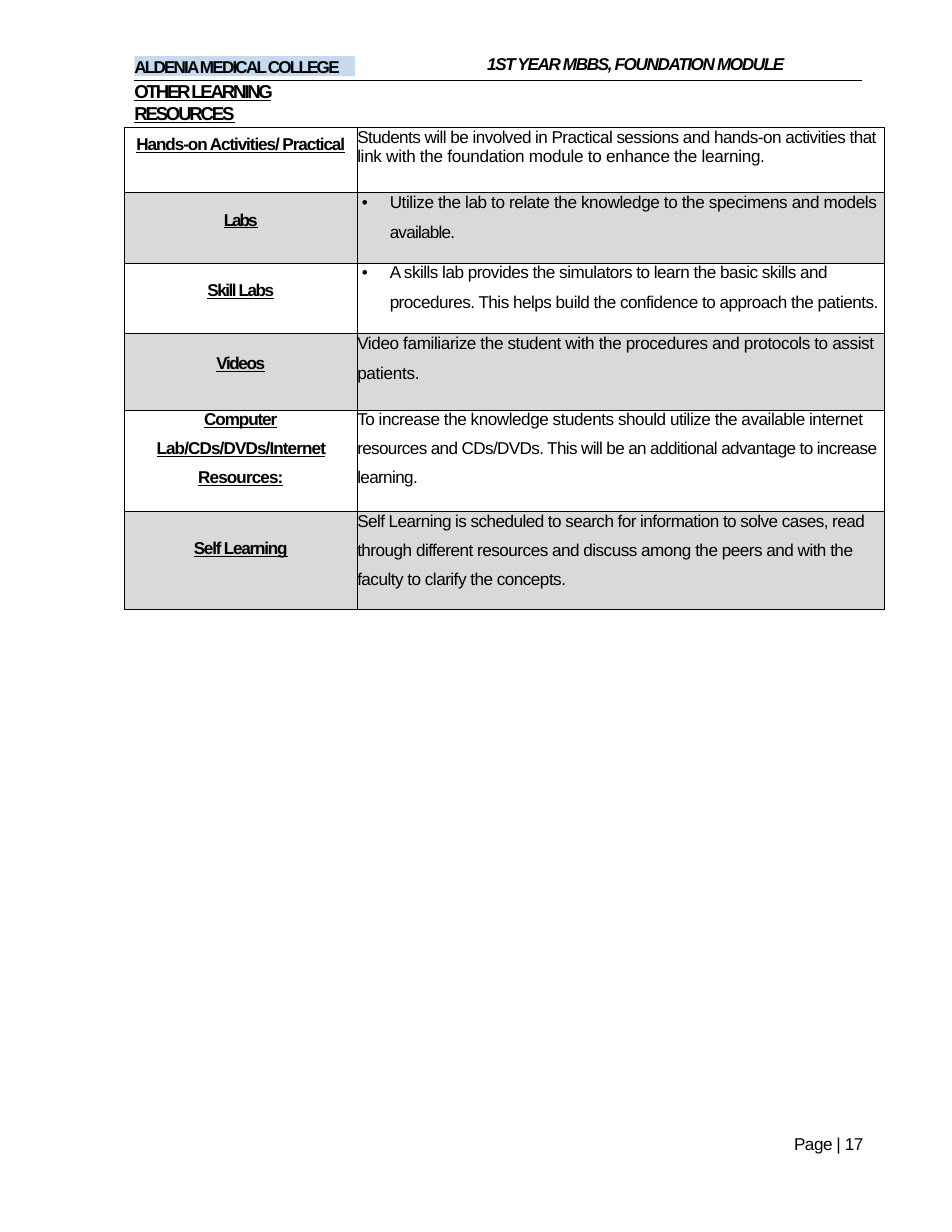
from pptx import Presentation
from pptx.util import Inches, Pt
from pptx.dml.color import RGBColor
from pptx.enum.shapes import MSO_CONNECTOR as Link, MSO_SHAPE as Shape
from pptx.enum.text import MSO_ANCHOR as Anchor, PP_ALIGN as Align
from pptx.oxml.ns import qn
from lxml import etree


def paint(target, color):
    if hasattr(target, "solid"):
        target.solid()
        target = target.fore_color
    target.rgb = RGBColor.from_string(color)


def write(para, text, gap, size=11, **style):
    """Fill a paragraph; gap is the letter spacing in points."""
    run = para.add_run()
    run.text = text
    run._r.get_or_add_rPr().set("spc", str(round(gap * 100)))
    font = para.font
    font.name, font.size = "Arial", Pt(size)
    font.bold = style.get("bold", False)
    font.italic = style.get("italic", False)
    font.underline = style.get("under", False)
    paint(font.color, "000000")


deck = Presentation()
deck.slide_width, deck.slide_height = Inches(8.5), Inches(11)
slide = deck.slides.add_slide(deck.slide_layouts[5])
shapes = slide.shapes

# Header rule
rule = shapes.add_connector(Link.STRAIGHT, Inches(1.2), Inches(0.72),
                            Inches(7.7), Inches(0.72))
paint(rule.line.fill, "000000")
rule.line.width = Pt(0.75)
etree.SubElement(rule._element.spPr, qn("a:effectLst"))

# Title, header and footer texts
title = shapes.title
college = shapes.add_shape(Shape.RECTANGLE, 0, 0, 0, 0)
college.shadow.inherit = False
paint(college.fill, "C5D9EF")
college.line.fill.background()
course = shapes.add_textbox(0, 0, 0, 0)
page = shapes.add_textbox(0, 0, 0, 0)

texts = [
    (title, (1.18, 0.7, 2.13, 0.23), 0.01, "OTHER LEARNING RESOURCES", -1.45,
     dict(size=12, bold=True, under=True)),
    (college, (1.2, 0.5, 1.97, 0.18), 0, "ALDENIA MEDICAL COLLEGE", -1.2,
     dict(bold=True)),
    (course, (4.35, 0.47, 3.38, 0.2), 0.01,
     "1ST YEAR MBBS, FOUNDATION MODULE", -0.9, dict(bold=True, italic=True)),
    (page, (7.09, 10.14, 0.64, 0.18), 0, "Page | 17", -0.3, {}),
]
for box, place, top, text, gap, style in texts:
    box.left, box.top, box.width, box.height = map(Inches, place)
    frame = box.text_frame
    frame.word_wrap = True
    frame.vertical_anchor = Anchor.TOP
    frame.margin_left = frame.margin_right = frame.margin_bottom = 0
    frame.margin_top = Inches(top)
    para = frame.paragraphs[0]
    para.alignment = Align.LEFT
    write(para, text, gap, **style)
title.text_frame.margin_left = Inches(0.02)
title.text_frame.margin_right = Inches(0.3)
page.text_frame.paragraphs[0].line_spacing = Pt(11.5)

# Rows: height, label top margin, label lines, body kind, body lines
rows = [
    (0.58, 0.07, [("Hands-on Activities/ Practical", -0.7)], "tight",
     [("Students will be involved in Practical sessions and hands-on "
       "activities that", -0.36),
      ("link with the foundation module to enhance the learning.", -0.2)]),
    (0.63, 0.16, [("Labs", -1.3)], "bullet",
     [("Utilize the lab to relate the knowledge to the specimens and models",
       -0.25),
      ("available.", -0.5)]),
    (0.63, 0.16, [("Skill Labs", -0.95)], "bullet",
     [("A skills lab provides the simulators to learn the basic skills and",
       -0.34),
      ("procedures. This helps build the confidence to approach the patients.",
       -0.34)]),
    (0.68, 0.18, [("Videos", -0.9)], "spaced",
     [("Video familiarize the student with the procedures and protocols "
       "to assist", -0.25),
      ("patients.", -0.2)]),
    (0.91, 0, [("Computer", -0.75),
               ("Lab/CDs/DVDs/Internet Resources:", -0.6)], "loose",
     [("To increase the knowledge students should utilize the available "
       "internet", -0.3),
      ("resources and CDs/DVDs. This will be an additional advantage to "
       "increase learning.", -0.43)]),
    (0.87, 0.24, [("Self Learning", -0.8)], "loose",
     [("Self Learning is scheduled to search for information to solve cases, "
       "read", -0.36),
      ("through different resources and discuss among the peers and with the "
       "faculty to clarify the concepts.", -0.33)]),
]

# Resource table
grid = shapes.add_table(len(rows), 2, Inches(1.11), Inches(1.14),
                        Inches(6.79), Inches(4.3)).table
grid.first_row = grid.horz_banding = False
grid.columns[0].width, grid.columns[1].width = Inches(2.08), Inches(4.71)

for i, (height, top, label, kind, body) in enumerate(rows):
    grid.rows[i].height = Inches(height)
    for j, lines in enumerate((label, body)):
        cell = grid.cell(i, j)
        cell.margin_left = cell.margin_right = cell.margin_bottom = 0
        cell.margin_top = Inches(0 if j else top)
        cell.vertical_anchor = Anchor.TOP
        frame = cell.text_frame
        for n, (text, gap) in enumerate(lines):
            para = frame.paragraphs[0] if n == 0 else frame.add_paragraph()
            props = para._p.get_or_add_pPr()
            if n and (j == 0 or kind == "loose"):
                para.line_spacing = 1.53
            elif n and kind != "tight":
                para.space_before = Pt(7)
            if j == 0:
                para.alignment = Align.CENTER
            elif kind == "bullet":
                props.set("marL", str(Inches(0.29)))
                if n == 0:
                    props.set("indent", str(Inches(-0.25)))
                    etree.SubElement(props, qn("a:buFont"), typeface="Arial")
                    etree.SubElement(props, qn("a:buChar")).set("char", "•")
            write(para, text, gap, bold=j == 0, under=j == 0)

        # Cell borders, then fill
        edges = cell._tc.get_or_add_tcPr()
        for side in ("lnL", "lnR", "lnT", "lnB"):
            edge = etree.SubElement(edges, qn("a:" + side), w=str(Pt(0.5)))
            ink = etree.SubElement(edge, qn("a:solidFill"))
            etree.SubElement(ink, qn("a:srgbClr"), val="000000")
        if i % 2:
            paint(cell.fill, "D9D9D9")
        else:
            cell.fill.background()

deck.save("out.pptx")
